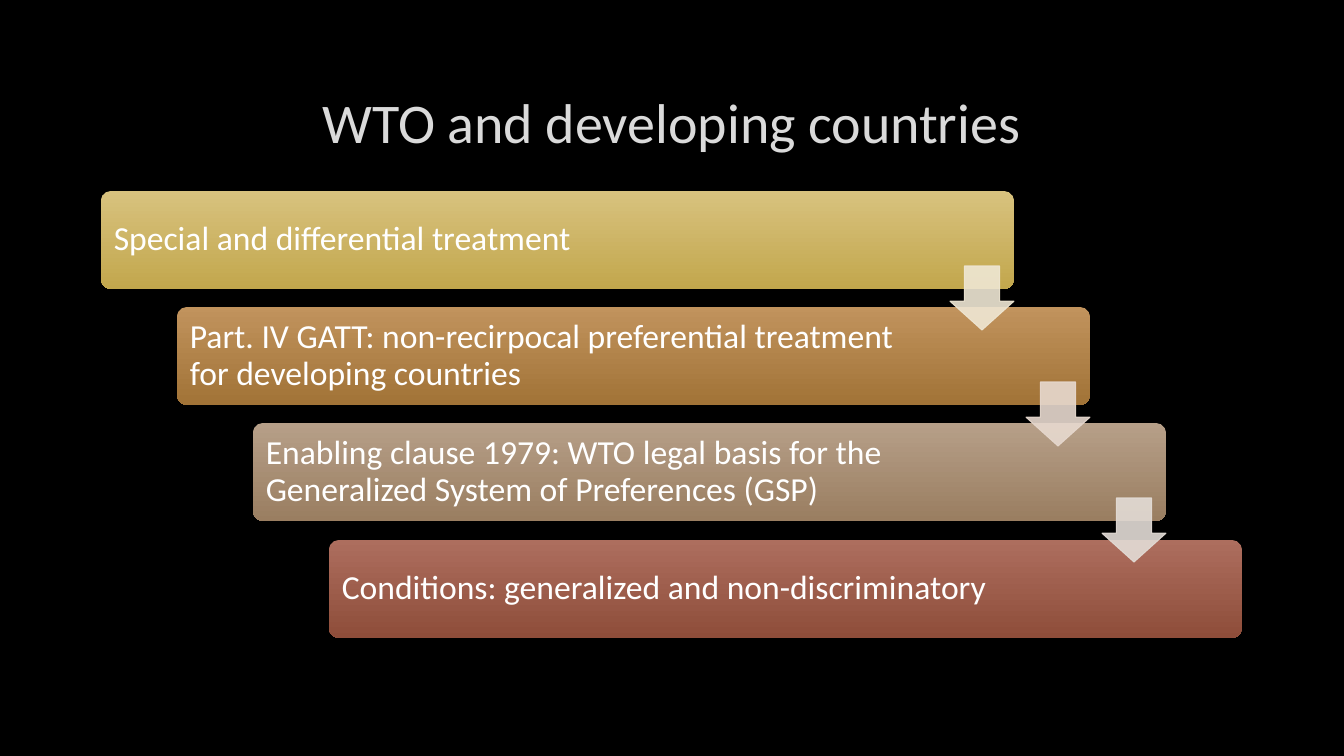
"""Build the slide on the WTO and developing countries as a descending staircase."""
from lxml.etree import SubElement
from pptx import Presentation
from pptx.dml.color import RGBColor
from pptx.enum.shapes import MSO_SHAPE
from pptx.enum.text import MSO_ANCHOR, PP_ALIGN
from pptx.oxml.ns import qn
from pptx.util import Emu, Pt

TITLE = "WTO and developing countries"
STEPS = [
    ("Special and differential treatment", "D8C27E", "C2A74D"),
    ("Part. IV GATT: non-recirpocal preferential treatment for developing countries", "C1935D", "A17337"),
    ("Enabling clause 1979: WTO legal basis for the Generalized System of Preferences (GSP)", "B69F88", "9A7E61"),
    ("Conditions: generalized and non-discriminatory", "AD6E5E", "8E4D3A"),
]
ARROW_COLOURS = ["EFE7D4", "E7D9CF", "E3DCD6"]

LEFT, TOP, STEP_WIDTH, STEP_HEIGHT = 101, 191, 913, 98
SHIFT_RIGHT, TOTAL_DROP = 76, 349
ARROW_SIZE, ARROW_DROP = 64, 75


def px(length):
    return Emu(round(length * 914400 / 100.8))


def colour(value):
    return RGBColor.from_string(value)


def set_font(paragraph, size, value):
    paragraph.font.name = "Calibri"
    paragraph.font.size = Pt(size)
    paragraph.font.color.rgb = colour(value)


def step_corner(index):
    return LEFT + index * SHIFT_RIGHT, TOP + index * TOTAL_DROP // (len(STEPS) - 1)


def add_preset(slide, preset, left, top, width, height, adjustments):
    shape = slide.shapes.add_shape(preset, px(left), px(top), px(width), px(height))
    shape.shadow.inherit = False
    for index, value in enumerate(adjustments):
        shape.adjustments[index] = value
    return shape


def add_step(slide, index, wording, light, dark):
    left, top = step_corner(index)
    step = add_preset(slide, MSO_SHAPE.ROUNDED_RECTANGLE, left, top, STEP_WIDTH, STEP_HEIGHT, [0.1])
    step.fill.gradient()
    step.fill.gradient_angle = 270
    for stop, position, value in zip(step.fill.gradient_stops, (0, 1), (light, dark)):
        stop.position = position
        stop.color.rgb = colour(value)
    step.line.fill.background()
    frame = step.text_frame
    frame.word_wrap = True
    frame.vertical_anchor = MSO_ANCHOR.MIDDLE
    frame.margin_left, frame.margin_right = px(10), px(150)
    frame.margin_top = frame.margin_bottom = px(10)
    paragraph = frame.paragraphs[0]
    paragraph.text = wording
    paragraph.alignment = PP_ALIGN.LEFT
    paragraph.line_spacing = 0.9
    set_font(paragraph, 24, "FFFFFF")


def add_arrow(slide, index, value):
    left, top = step_corner(index)
    arrow = add_preset(slide, MSO_SHAPE.DOWN_ARROW, left + STEP_WIDTH - ARROW_SIZE,
                       top + ARROW_DROP, ARROW_SIZE, ARROW_SIZE, [0.55, 0.45])
    arrow.fill.solid()
    arrow.fill.fore_color.rgb = colour(value)
    arrow.line.color.rgb = colour(value)
    arrow.line.width = Pt(0.75)
    for tint in list(arrow._element.spPr.iter(qn("a:srgbClr"))):
        SubElement(tint, qn("a:alpha")).set("val", "90000")


def main():
    presentation = Presentation()
    presentation.slide_width, presentation.slide_height = px(1344), px(756)
    slide = presentation.slides.add_slide(presentation.slide_layouts[5])
    slide.background.fill.solid()
    slide.background.fill.fore_color.rgb = colour("000000")

    title = slide.shapes.title
    title.left, title.top, title.width, title.height = px(101), px(68), px(1141), px(107)
    title.text_frame.text = TITLE
    title.text_frame.vertical_anchor = MSO_ANCHOR.MIDDLE
    heading = title.text_frame.paragraphs[0]
    heading.alignment = PP_ALIGN.CENTER
    set_font(heading, 40, "DADADA")

    for index, step in enumerate(STEPS):
        add_step(slide, index, *step)
    for index, value in enumerate(ARROW_COLOURS):
        add_arrow(slide, index, value)
    presentation.save("out.pptx")


if __name__ == "__main__":
    main()
